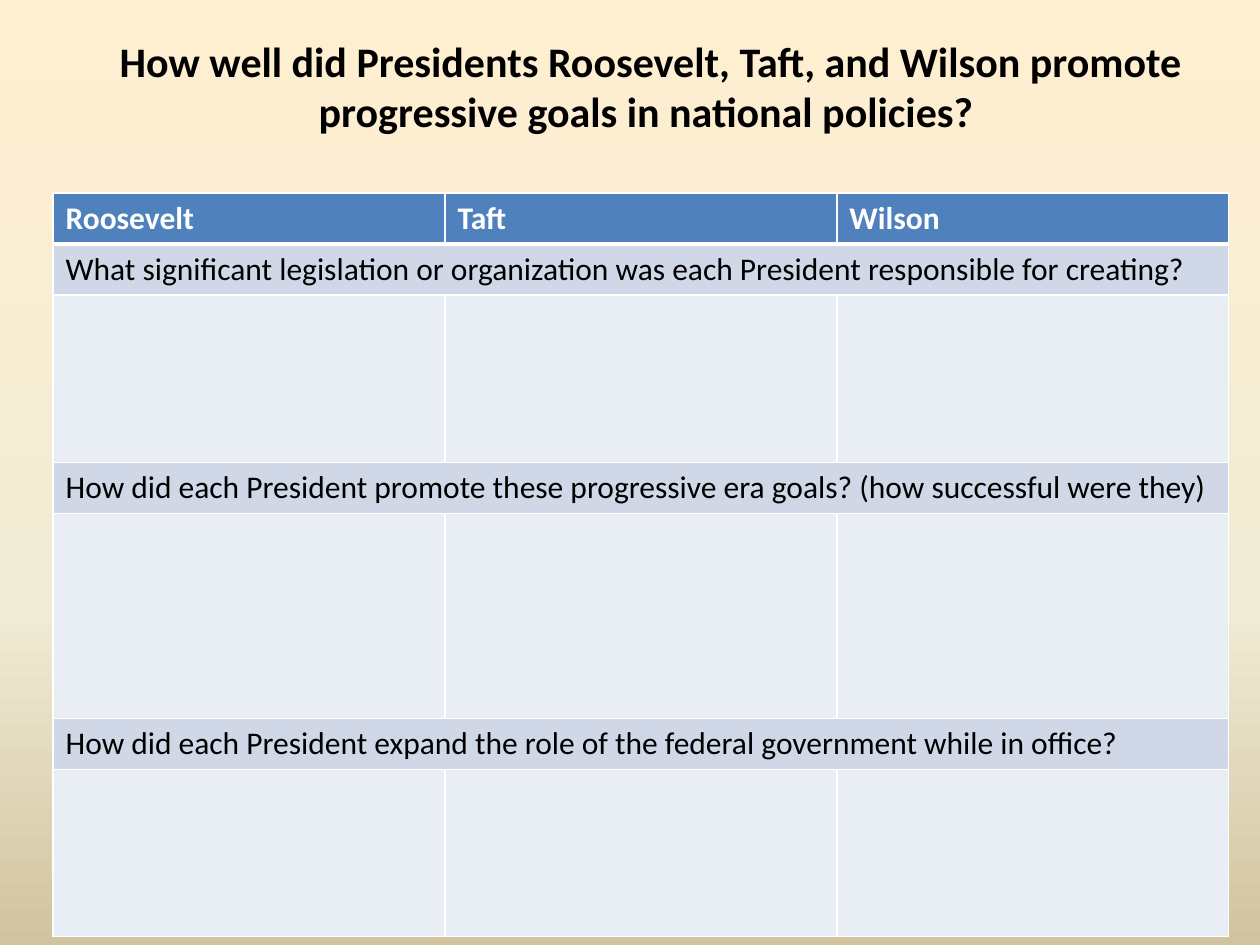
from copy import deepcopy

from lxml.etree import SubElement
from pptx import Presentation
from pptx.dml.color import RGBColor as RGB
from pptx.enum.text import MSO_ANCHOR as Anchor, PP_ALIGN as Align
from pptx.oxml.ns import qn
from pptx.util import Cm, Pt

TITLE = ("How well did Presidents Roosevelt, Taft, and Wilson promote "
         "progressive goals in national policies? ")
PRESIDENTS = ["Roosevelt", "Taft", "Wilson"]
# Each question with the height in cm of the answer row below it
QUESTIONS = [
    ("What significant legislation or organization was each President "
     "responsible for creating?", 3.37),
    ("How did each President promote these progressive era goals? "
     "(how successful were they)", 4.13),
    ("How did each President expand the role of the federal government "
     "while in office?", 3.37),
]
COLORS = {"header": "4F81BD", "question": "D0D8E8", "answer": "E9EDF4",
          "white": "FFFFFF", "black": "000000"}
BACKGROUND = [(0, "FFEFD1"), (0.65, "F0EBD5"), (1, "D1C39F")]
TITLE_BOX = {"left": 0.84, "top": 0.43, "width": 24.56, "height": 2.44}
TABLE_BOX = {"left": 1.07, "top": 3.89, "width": 23.7}
TEXT_ROW = 1.03
HEADER_FONT = {"name": "Calibri", "size": Pt(18), "bold": True}
QUESTION_FONT = HEADER_FONT | {"bold": False}
TITLE_FONT = HEADER_FONT | {"size": Pt(24)}


def color(name):
    return RGB.from_string(COLORS[name])


def format_font(font, values, color_name):
    for key, value in values.items():
        setattr(font, key, value)
    font.color.rgb = color(color_name)


def paint_background(slide):
    fill = slide.background.fill
    fill.gradient()
    fill.gradient_angle = 270
    stop_list = next(slide.element.iter(qn("a:gsLst")))
    stop_list.append(deepcopy(stop_list[-1]))
    for stop, (position, hex_color) in zip(fill.gradient_stops, BACKGROUND):
        stop.position = position
        stop.color.rgb = RGB.from_string(hex_color)


def add_title(slide):
    title = slide.shapes.title
    for key, value in TITLE_BOX.items():
        setattr(title, key, Cm(value))
    frame = title.text_frame
    frame.text = TITLE
    frame.word_wrap = True
    frame.vertical_anchor = Anchor.BOTTOM
    para = frame.paragraphs[0]
    para.alignment = Align.CENTER
    format_font(para.runs[0].font, TITLE_FONT, "black")


def style_cell(cell, fill_name, top=1, bottom=1):
    """Give a cell white borders, widths in points, and a solid fill."""
    properties = cell._tc.get_or_add_tcPr()
    for side, width in {"L": 1, "R": 1, "T": top, "B": bottom}.items():
        line = SubElement(properties, qn(f"a:ln{side}"), w=str(Pt(width)))
        solid = SubElement(line, qn("a:solidFill"))
        SubElement(solid, qn("a:srgbClr"), val=COLORS["white"])
    cell.fill.solid()
    cell.fill.fore_color.rgb = color(fill_name)


def write_cell(cell, text, font_values, color_name):
    cell.text = text
    format_font(cell.text_frame.paragraphs[0].runs[0].font,
                font_values, color_name)


def add_chart_of_presidents(slide):
    heights = [TEXT_ROW]
    for _, answer_height in QUESTIONS:
        heights += [TEXT_ROW, answer_height]
    box = [Cm(TABLE_BOX[key]) for key in ("left", "top", "width")]
    table = slide.shapes.add_table(len(heights), len(PRESIDENTS), *box,
                                   Cm(sum(heights))).table

    for index, (row, height) in enumerate(zip(table.rows, heights)):
        row.height = Cm(height)
        for cell in row.cells:
            if index == 0:
                style_cell(cell, "header", bottom=3)
            elif index % 2:
                style_cell(cell, "question", top=3 if index == 1 else 1)
            else:
                style_cell(cell, "answer")

    for column, name in enumerate(PRESIDENTS):
        write_cell(table.cell(0, column), name, HEADER_FONT, "white")
    for number, (question, _) in enumerate(QUESTIONS):
        row = 2 * number + 1
        cell = table.cell(row, 0)
        cell.merge(table.cell(row, len(PRESIDENTS) - 1))
        write_cell(cell, question, QUESTION_FONT, "black")


def main():
    deck = Presentation()
    deck.slide_width, deck.slide_height = Cm(25.4), Cm(19.05)
    slide = deck.slides.add_slide(deck.slide_layouts.get_by_name("Title Only"))
    paint_background(slide)
    add_title(slide)
    add_chart_of_presidents(slide)
    deck.save("out.pptx")


if __name__ == "__main__":
    main()
